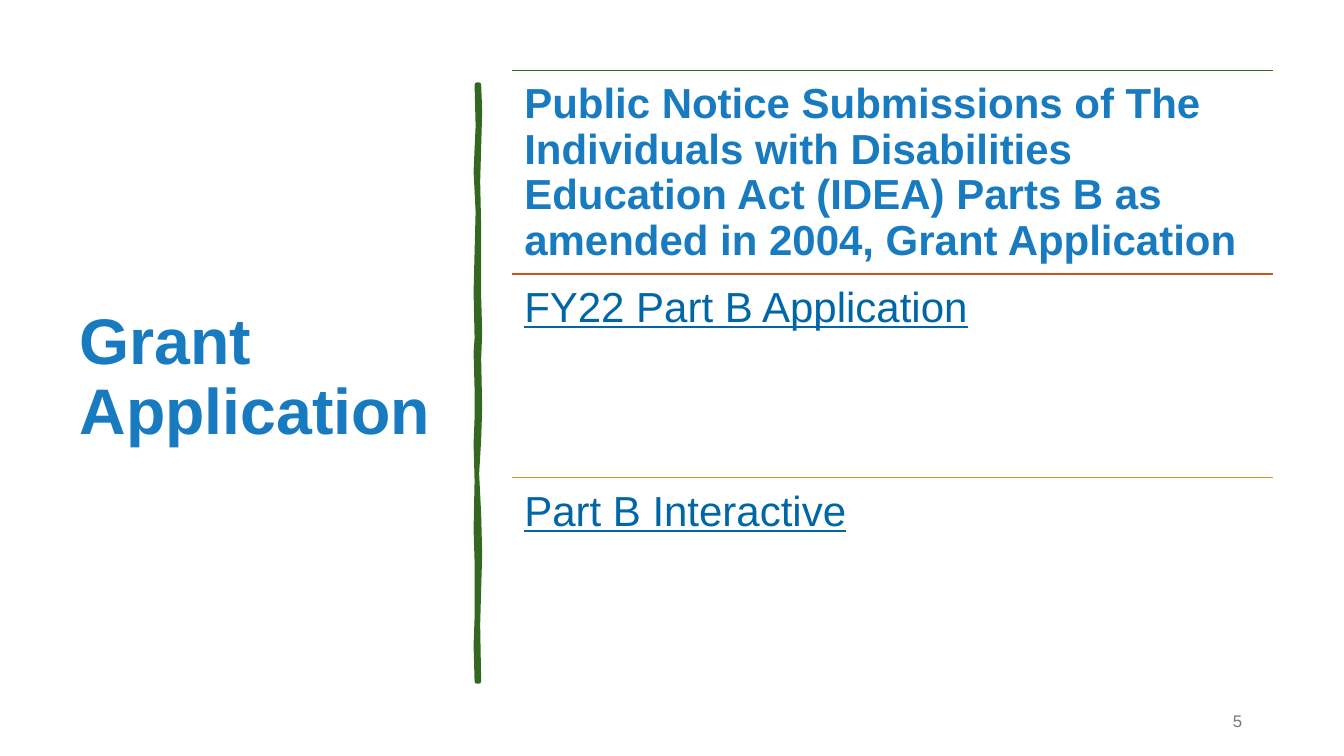
import pptx
import pptx.dml.color
import pptx.enum.shapes
import pptx.enum.text
import pptx.oxml.ns
import pptx.util
from lxml import etree

PX = 9144
ANCHOR = pptx.enum.text.MSO_ANCHOR
ALIGN = pptx.enum.text.PP_ALIGN


def rgb(value):
    """Turn a hex string into a colour."""
    return pptx.dml.color.RGBColor.from_string(value)


def write(frame, text, size, color, bold=False, underline=False, align=ALIGN.LEFT,
          anchor=ANCHOR.TOP, spacing=0.9, insets=(10, 5)):
    """Fill a text frame with one formatted paragraph."""
    frame.word_wrap = True
    frame.auto_size = pptx.enum.text.MSO_AUTO_SIZE.NONE
    frame.vertical_anchor = anchor
    frame.margin_left = frame.margin_right = insets[0] * PX
    frame.margin_top = frame.margin_bottom = insets[1] * PX
    paragraph = frame.paragraphs[0]
    paragraph.alignment = align
    paragraph.line_spacing = spacing
    paragraph.space_before = pptx.util.Pt(0)
    run = paragraph.add_run()
    run.text = text
    run.font.name = "Arial"
    run.font.size = pptx.util.Pt(size)
    run.font.bold = bold
    run.font.underline = underline
    run.font.color.rgb = rgb(color)


class GrantSlide:
    """Hold the palette and the current slide."""

    blue, link, green, grey = "187BC0", "0066A6", "326820", "787878"

    def __init__(self, deck):
        """Add a title-only slide to the deck."""
        self.slide = deck.slides.add_slide(deck.slide_layouts[5])

    def title(self, text, left, top, width, height, **style):
        """Place and format the title placeholder."""
        heading = self.slide.shapes.title
        heading.left, heading.top = left * PX, top * PX
        heading.width, heading.height = width * PX, height * PX
        write(heading.text_frame, text, **style)

    def text(self, text, left, top, width, height, **style):
        """Add a text box."""
        box = self.slide.shapes.add_textbox(left * PX, top * PX, width * PX, height * PX)
        write(box.text_frame, text, **style)

    def rule(self, left, right, y, color):
        """Draw a horizontal rule."""
        rule = self.slide.shapes.add_connector(
            pptx.enum.shapes.MSO_CONNECTOR.STRAIGHT, left * PX, y * PX, right * PX, y * PX)
        rule.line.color.rgb = rgb(color)
        rule.line.width = pptx.util.Pt(1)
        etree.SubElement(rule._element.spPr, pptx.oxml.ns.qn("a:effectLst"))

    def brush_stroke(self, outline, color):
        """Draw a filled, hand-drawn stroke with rounded corners."""
        builder = self.slide.shapes.build_freeform(*outline[0], scale=PX)
        builder.add_line_segments(outline[1:], close=True)
        stroke = builder.convert_to_shape()
        stroke.shadow.inherit = False
        stroke.fill.solid()
        stroke.fill.fore_color.rgb = rgb(color)
        stroke.line.color.rgb = rgb(color)
        stroke.line.width = pptx.util.Pt(3.25)
        border = stroke._element.spPr.find(pptx.oxml.ns.qn("a:ln"))
        etree.SubElement(border, pptx.oxml.ns.qn("a:round"))


def main():
    """Build the grant application slide."""
    deck = pptx.Presentation()
    deck.slide_width, deck.slide_height = 1333 * PX, 750 * PX
    page = GrantSlide(deck)

    page.title("Grant Application", 69, 70, 374, 611, size=46, color=page.blue,
               bold=True, anchor=ANCHOR.MIDDLE)

    right_edge = [(475, 84), (476, 110), (475, 146), (474, 180), (475, 226), (475, 294),
                  (476, 330), (475, 356), (476, 405), (475, 436), (473, 470), (475, 510),
                  (476, 550), (475, 584), (474, 620), (475, 676)]
    left_edge = [(473, 676), (472, 640), (473, 613), (473, 557), (472, 525), (473, 477),
                 (472, 440), (473, 415), (473, 386), (472, 350), (473, 335), (472, 290),
                 (473, 250), (474, 210), (472, 170), (474, 125), (473, 84)]
    page.brush_stroke(right_edge + left_edge, page.green)

    page.text("5", 942, 695, 300, 40, size=12, color=page.grey, align=ALIGN.RIGHT,
              anchor=ANCHOR.MIDDLE, spacing=1.0)

    left, top, width, row_height = 508, 70, 755, 202
    rows = [
        ("Public Notice Submissions of The Individuals with Disabilities Education Act "
         "(IDEA) Parts B as amended in 2004, Grant Application",
         page.green, {"color": page.blue, "bold": True}),
        ("FY22 Part B Application", "D15420", {"color": page.link, "underline": True}),
        ("Part B Interactive", "DE9027", {"color": page.link, "underline": True}),
    ]
    for index, (entry, rule_color, style) in enumerate(rows):
        row_top = top + index * row_height
        page.rule(left, left + width, row_top, rule_color)
        page.text(entry, left, row_top, width, row_height, size=30, insets=(12, 12), **style)

    deck.save("out.pptx")


if __name__ == "__main__":
    main()
